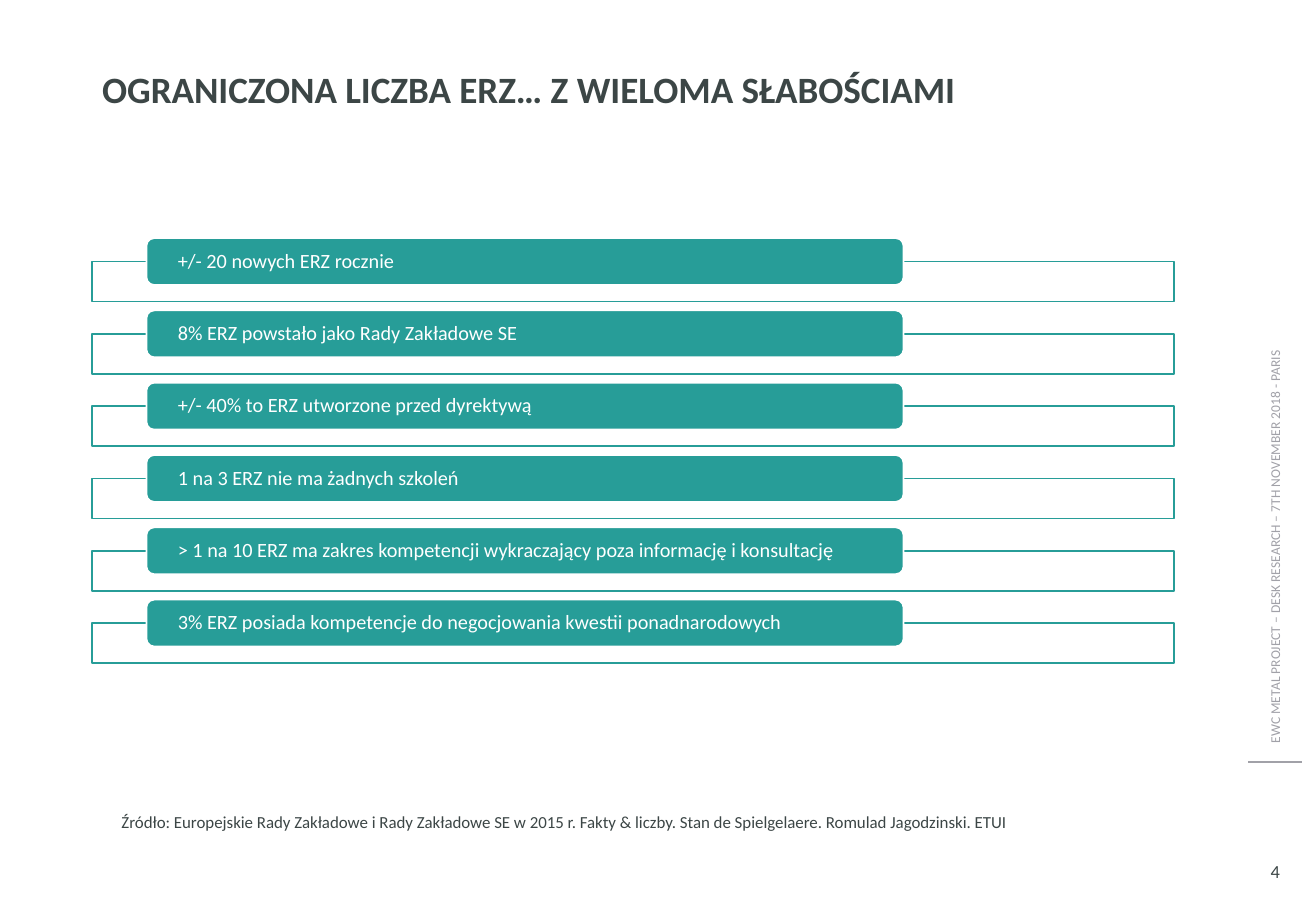
from pptx import Presentation
from pptx.dml.color import RGBColor
from pptx.enum.shapes import MSO_CONNECTOR, MSO_SHAPE
from pptx.enum.text import MSO_ANCHOR, PP_ALIGN
from pptx.oxml.ns import qn
from pptx.util import Cm, Pt
from lxml.etree import SubElement

COLORS = {"teal": "279D98", "dark": "3C4646", "grey": "A1A1A8", "white": "FFFFFF"}
FACTS = [
    "+/- 20 nowych ERZ rocznie",
    "8% ERZ powstało jako Rady Zakładowe SE",
    "+/- 40% to ERZ utworzone przed dyrektywą",
    "1 na 3 ERZ nie ma żadnych szkoleń",
    "> 1 na 10 ERZ ma zakres kompetencji wykraczający poza informację i konsultację",
    "3% ERZ posiada kompetencje do negocjowania kwestii ponadnarodowych",
]


def rgb(name):
    return RGBColor.from_string(COLORS[name])


def set_text(sp, text, size=12, color="dark", bold=False, align=PP_ALIGN.LEFT,
             anchor=MSO_ANCHOR.MIDDLE, spacing=1.0, wrap=True):
    tf = sp.text_frame
    tf.word_wrap = wrap
    tf.vertical_anchor = anchor
    p = tf.paragraphs[0]
    p.alignment = align
    p.line_spacing = spacing
    r = p.add_run()
    r.text = text
    r.font.name = "Calibri"
    r.font.size = Pt(size)
    r.font.bold = bold
    r.font.color.rgb = rgb(color)
    return tf


def add_text(s, box, text, **fmt):
    sp = s.shapes.add_textbox(*map(Cm, box))
    set_text(sp, text, **fmt)
    return sp


def add_block(s, kind, box, fill, line):
    sp = s.shapes.add_shape(kind, *map(Cm, box))
    sp.shadow.inherit = False
    sp.fill.solid()
    sp.fill.fore_color.rgb = rgb(fill)
    sp.line.color.rgb = rgb(line)
    sp.line.width = Pt(1)
    return sp


def add_title(s, box, text):
    sp = s.shapes.title
    sp.left, sp.top, sp.width, sp.height = map(Cm, box)
    tf = set_text(sp, text, size=22, bold=True, spacing=0.9)
    tf.margin_bottom = Cm(1.08)  # lifts the line above the middle


def add_facts(s, box, facts):
    left, top, width, height = box
    bar_h, frame_h, frame_dy = 0.98, 0.84, 0.49
    pitch = (height - frame_dy - frame_h) / (len(facts) - 1)
    for i, fact in enumerate(facts):
        y = top + i * pitch
        add_block(s, MSO_SHAPE.RECTANGLE, (left, y + frame_dy, width, frame_h),
                  "white", "teal")
        bar = add_block(s, MSO_SHAPE.ROUNDED_RECTANGLE,
                        (left + 0.05 * width, y, 0.7 * width, bar_h), "teal", "white")
        tf = set_text(bar, fact, color="white", spacing=0.9)
        tf.margin_left = tf.margin_right = Cm(0.61)
        tf.margin_top = tf.margin_bottom = 0


def add_side_strip(s, box, event, number):
    left, top, width, height = box
    # Event name, read upwards and ending above the rule
    length, thick = 13.87, 0.61
    mid_x, mid_y = left + 0.56, top + 8.86
    sp = add_text(s, (mid_x - length / 2, mid_y - thick / 2, length, thick),
                  event, size=8, color="grey")
    sp.rotation = 270
    # Rule
    rule_y = Cm(top + 15.93)
    line = s.shapes.add_connector(MSO_CONNECTOR.STRAIGHT, Cm(left), rule_y,
                                  Cm(left + width), rule_y)
    line.line.color.rgb = rgb("grey")
    line.line.width = Pt(1)
    SubElement(line._element.spPr, qn("a:effectLst"))
    # Page number
    add_text(s, (left - 0.05, top + height - 1.04, 1.24, 1.04), number,
             size=10.9, align=PP_ALIGN.CENTER)


def main():
    prs = Presentation()
    prs.slide_width, prs.slide_height = Cm(27.51), Cm(19.05)
    s = prs.slides.add_slide(prs.slide_layouts[5])
    add_side_strip(s, (26.09, 0, 1.12, 18.74),
                   "EWC METAL PROJECT – DESK RESEARCH – 7TH NOVEMBER 2018 - PARIS", "4")
    add_title(s, (1.88, 1.02, 22.61, 2.74), "OGRANICZONA LICZBA ERZ… Z WIELOMA SŁABOŚCIAMI")
    add_facts(s, (1.93, 4.98, 22.61, 8.89), FACTS)
    # Source line
    add_text(s, (2.29, 16.84, 19.96, 0.69),
             "Źródło: Europejskie Rady Zakładowe i Rady Zakładowe SE w 2015 r. "
             "Fakty & liczby. Stan de Spielgelaere. Romulad Jagodzinski. ETUI",
             size=10, anchor=MSO_ANCHOR.TOP)
    prs.save("out.pptx")


if __name__ == "__main__":
    main()
